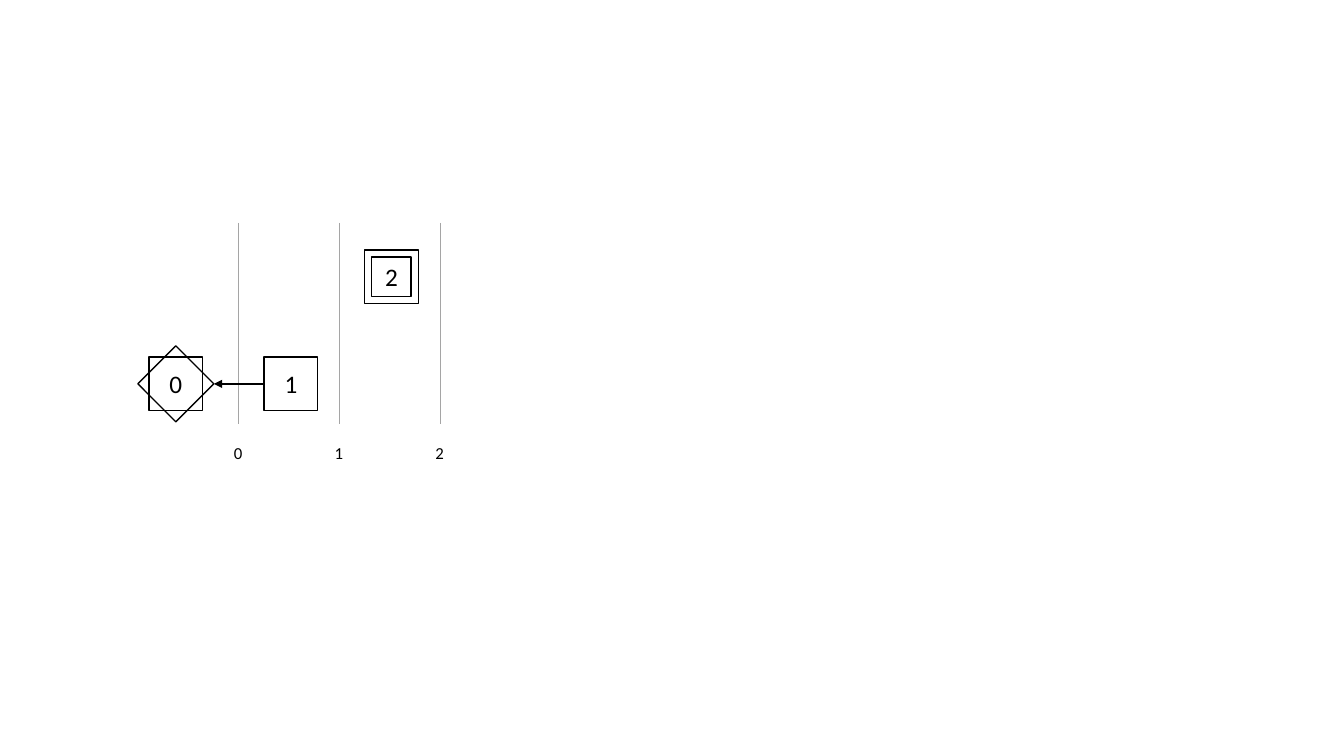
from dataclasses import dataclass
from math import sqrt

from lxml.etree import SubElement
from pptx import Presentation
from pptx.dml.color import RGBColor
from pptx.enum.shapes import MSO_CONNECTOR as Connector, MSO_SHAPE as Preset
from pptx.enum.text import MSO_ANCHOR as Anchor, MSO_AUTO_SIZE as AutoSize, PP_ALIGN as Align
from pptx.oxml.ns import qn
from pptx.shapes.autoshape import Shape
from pptx.slide import Slide
from pptx.table import _Cell as Cell
from pptx.text.text import _Paragraph as Paragraph
from pptx.util import Pt

BLACK = RGBColor(0x00, 0x00, 0x00)
GRID_GRAY = RGBColor(0xA5, 0xA5, 0xA5)
FONT = "Calibri"

GRID_LEFT, GRID_TOP, GRID_STEP = 170.4, 159.2, 72
LABEL_TOP, LABEL_WIDTH, LABEL_HEIGHT = 312.5, 20.9, 21.8
SIDE = 38.4
INNER_SIDE = 28.2


@dataclass(frozen=True)
class Node:
    text: str
    center_x: float
    center_y: float
    extra_side: float = 0  # second outline around the same center, if any
    extra_turn: float = 0


NODES = [
    Node("0", 125.6, 274.2, extra_side=SIDE, extra_turn=45),
    Node("1", 207.8, 274.2),
    Node("2", 279.6, 197.7, extra_side=INNER_SIDE),
]


def add_text(paragraph: Paragraph, text: str, size: float) -> None:
    run = paragraph.add_run()
    run.text = text
    run.font.name = FONT
    run.font.size = Pt(size)
    run.font.color.rgb = BLACK


def add_label(slide: Slide, text: str, center_x: float) -> None:
    box = slide.shapes.add_textbox(
        Pt(center_x - LABEL_WIDTH / 2), Pt(LABEL_TOP), Pt(LABEL_WIDTH), Pt(LABEL_HEIGHT))
    box.text_frame.word_wrap = False
    box.text_frame.auto_size = AutoSize.SHAPE_TO_FIT_TEXT
    add_text(box.text_frame.paragraphs[0], text, 12)


def style_cell(cell: Cell) -> None:
    """Keep only the vertical borders."""
    properties = cell._tc.get_or_add_tcPr()
    for edge in ("lnL", "lnR", "lnT", "lnB"):
        border = SubElement(properties, qn(f"a:{edge}"), w=str(Pt(0.5)))
        if edge in ("lnL", "lnR"):
            fill = SubElement(border, qn("a:solidFill"))
            SubElement(fill, qn("a:srgbClr"), val=str(GRID_GRAY))
        else:
            SubElement(border, qn("a:noFill"))
    cell.fill.background()


def add_grid(slide: Slide) -> None:
    extent = Pt(2 * GRID_STEP)
    table = slide.shapes.add_table(
        2, 2, Pt(GRID_LEFT), Pt(GRID_TOP), extent, extent).table
    table.first_row = False
    table.horz_banding = False
    for cell in table.iter_cells():
        style_cell(cell)


def add_square(shapes, node: Node, side: float) -> Shape:
    square = shapes.add_shape(
        Preset.RECTANGLE, Pt(node.center_x - side / 2), Pt(node.center_y - side / 2),
        Pt(side), Pt(side))
    square.shadow.inherit = False
    square.fill.background()
    square.line.color.rgb = BLACK
    square.line.width = Pt(1)
    return square


def add_node(slide: Slide, node: Node) -> Shape:
    shapes = slide.shapes.add_group_shape().shapes if node.extra_side else slide.shapes
    square = add_square(shapes, node, SIDE)
    square.text_frame.vertical_anchor = Anchor.MIDDLE
    paragraph = square.text_frame.paragraphs[0]
    paragraph.alignment = Align.CENTER
    add_text(paragraph, node.text, 18)
    if node.extra_side:
        add_square(shapes, node, node.extra_side).rotation = node.extra_turn
    return square


def add_arrow(slide: Slide, source: Shape, target: Node) -> None:
    """Join the left side of the source to the right tip of the turned square."""
    tip_x, tip_y = Pt(target.center_x + SIDE / sqrt(2)), Pt(target.center_y)
    arrow = slide.shapes.add_connector(
        Connector.STRAIGHT, source.left, tip_y, tip_x, tip_y)
    arrow.begin_connect(source, 1)
    arrow.line.color.rgb = BLACK
    arrow.line.width = Pt(1)
    SubElement(arrow.line._get_or_add_ln(), qn("a:tailEnd"), type="triangle")
    SubElement(arrow._element.spPr, qn("a:effectLst"))


def main() -> None:
    presentation = Presentation()
    presentation.slide_width, presentation.slide_height = Pt(960), Pt(540)
    slide = presentation.slides.add_slide(presentation.slide_layouts[6])

    # Time axis
    for index in range(3):
        add_label(slide, str(index), GRID_LEFT + index * GRID_STEP)
    add_grid(slide)

    # Nodes and their link
    squares = [add_node(slide, node) for node in NODES]
    add_arrow(slide, squares[1], NODES[0])

    presentation.save("out.pptx")


if __name__ == "__main__":
    main()
